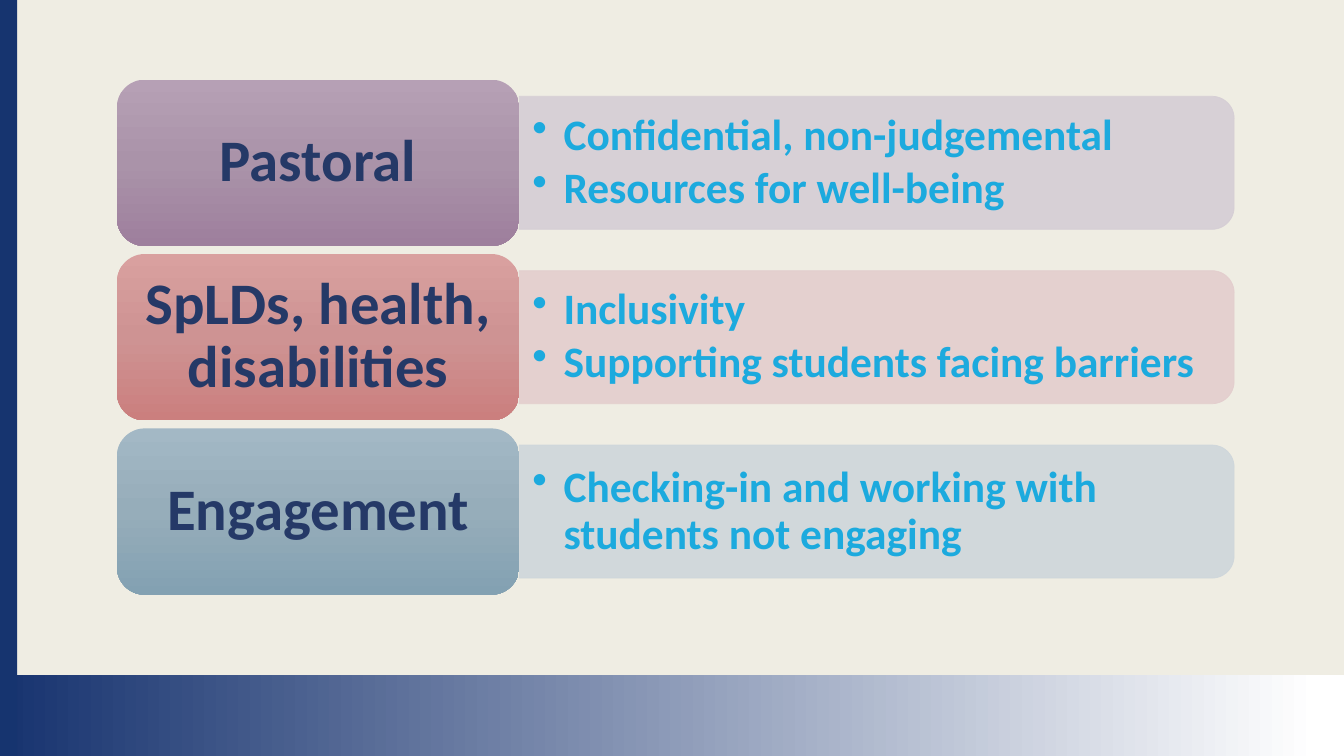
from lxml.etree import SubElement
from pptx import Presentation
from pptx.dml.color import RGBColor
from pptx.enum.shapes import MSO_SHAPE
from pptx.enum.text import MSO_ANCHOR, PP_ALIGN
from pptx.oxml.ns import qn
from pptx.util import Inches, Pt

SERVICES = [
    ("Pastoral", ["Confidential, non-judgemental", "Resources for well-being"],
     "D5CDD5", ["B6A0B5", "AA93A9", "9E7F9D"]),
    ("SpLDs, health, disabilities", ["Inclusivity", "Supporting students facing barriers"],
     "E3CDCD", ["D9A09F", "CE9393", "CB7F7E"]),
    ("Engagement", ["Checking-in and working with students not engaging"],
     "CED6DB", ["A3B8C5", "96ADBA", "83A1B2"]),
]
COLORS = {"background": "EFEDE3", "side": "16346F", "footer": "17336F",
          "white": "FFFFFF", "label": "253967", "bullet": "1CAADE"}
FONT = "Calibri"

SLIDE_WIDTH, SLIDE_HEIGHT = 13.33, 7.5
LABEL_LEFT, LABEL_WIDTH, LABEL_HEIGHT = 1.16, 3.99, 1.65
FIRST_TOP, ROW_PITCH = 0.79, 1.73
PANEL_LEFT, PANEL_LENGTH, PANEL_HEIGHT = LABEL_LEFT + LABEL_WIDTH, 7.09, 1.32
POINTS_WIDTH, POINTS_HEIGHT = 7.03, 1.19
BULLET_INDENT = 0.31


def add_block(slide, kind, left, top, width, height):
    """Add a preset shape without outline or shadow."""
    shape = slide.shapes.add_shape(kind, Inches(left), Inches(top), Inches(width), Inches(height))
    shape.shadow.inherit = False
    shape.line.fill.background()
    return shape


def fill_solid(fill, color, alpha=100):
    fill.solid()
    fill.fore_color.rgb = RGBColor.from_string(color)
    return alpha


def set_alpha(shape, percent):
    """Make the solid fill and the solid line partly transparent."""
    for color in shape._element.spPr.iter(qn("a:srgbClr")):
        SubElement(color, qn("a:alpha"), val=str(percent * 1000))


def fill_gradient(shape, stops, angle):
    """Fill with (percent, colour) stops; the angle runs clockwise in degrees."""
    shape.fill.gradient()
    gradient = shape._element.spPr.find(qn("a:gradFill"))
    stop_list = gradient.find(qn("a:gsLst"))
    for stop in list(stop_list):
        stop_list.remove(stop)
    for percent, color in stops:
        stop = SubElement(stop_list, qn("a:gs"), pos=str(percent * 1000))
        SubElement(stop, qn("a:srgbClr"), val=color)
    gradient.find(qn("a:lin")).set("ang", str(angle * 60000))


def add_bullet(paragraph):
    properties = paragraph._p.get_or_add_pPr()
    properties.set("marL", str(Inches(BULLET_INDENT)))
    properties.set("indent", str(-Inches(BULLET_INDENT)))
    SubElement(properties, qn("a:buChar"), char="•")


def write_text(shape, lines, size, color, align=PP_ALIGN.LEFT, inset=(0.13, 0.06),
               bullets=False, gap=0):
    frame = shape.text_frame
    frame.word_wrap = True
    frame.vertical_anchor = MSO_ANCHOR.MIDDLE
    frame.margin_left = frame.margin_right = Inches(inset[0])
    frame.margin_top = frame.margin_bottom = Inches(inset[1])
    for index, line in enumerate(lines):
        paragraph = frame.add_paragraph() if index else frame.paragraphs[0]
        if bullets:
            add_bullet(paragraph)
        paragraph.alignment = align
        paragraph.line_spacing = 0.9
        if index:
            paragraph.space_before = Pt(gap)
        run = paragraph.add_run()
        run.text = line
        run.font.name = FONT
        run.font.size = Pt(size)
        run.font.bold = True
        run.font.color.rgb = RGBColor.from_string(color)


def add_service(slide, top, label, points, panel_color, label_colors):
    middle = top + LABEL_HEIGHT / 2

    # The panel is upright before its quarter turn, so its sides are swapped.
    panel = add_block(slide, MSO_SHAPE.ROUND_2_SAME_RECTANGLE,
                      PANEL_LEFT + (PANEL_LENGTH - PANEL_HEIGHT) / 2,
                      middle - PANEL_LENGTH / 2, PANEL_HEIGHT, PANEL_LENGTH)
    panel.rotation = 90
    fill_solid(panel.fill, panel_color)
    fill_solid(panel.line.fill, panel_color)
    panel.line.width = Pt(0.5)
    set_alpha(panel, 90)

    points_box = slide.shapes.add_textbox(
        Inches(PANEL_LEFT), Inches(middle - POINTS_HEIGHT / 2),
        Inches(POINTS_WIDTH), Inches(POINTS_HEIGHT))
    write_text(points_box, points, 31, COLORS["bullet"], bullets=True, gap=4.65)

    label_box = add_block(slide, MSO_SHAPE.ROUNDED_RECTANGLE,
                          LABEL_LEFT, top, LABEL_WIDTH, LABEL_HEIGHT)
    fill_gradient(label_box, zip((0, 50, 100), label_colors), 90)
    write_text(label_box, [label], 42, COLORS["label"], align=PP_ALIGN.CENTER,
               inset=(0.17, 0.09))


def main():
    presentation = Presentation()
    presentation.slide_width = Inches(SLIDE_WIDTH)
    presentation.slide_height = Inches(SLIDE_HEIGHT)
    slide = presentation.slides.add_slide(presentation.slide_layouts[6])
    fill_solid(slide.background.fill, COLORS["background"])

    footer = add_block(slide, MSO_SHAPE.RECTANGLE, 0, 6.7, SLIDE_WIDTH, 0.8)
    fill_gradient(footer, [(0, COLORS["footer"]), (98, COLORS["white"]),
                           (100, COLORS["white"])], 0)
    side = add_block(slide, MSO_SHAPE.RECTANGLE, 0, 0, 0.17, SLIDE_HEIGHT)
    fill_solid(side.fill, COLORS["side"])

    for row, service in enumerate(SERVICES):
        add_service(slide, FIRST_TOP + row * ROW_PITCH, *service)
    presentation.save("out.pptx")


if __name__ == "__main__":
    main()
